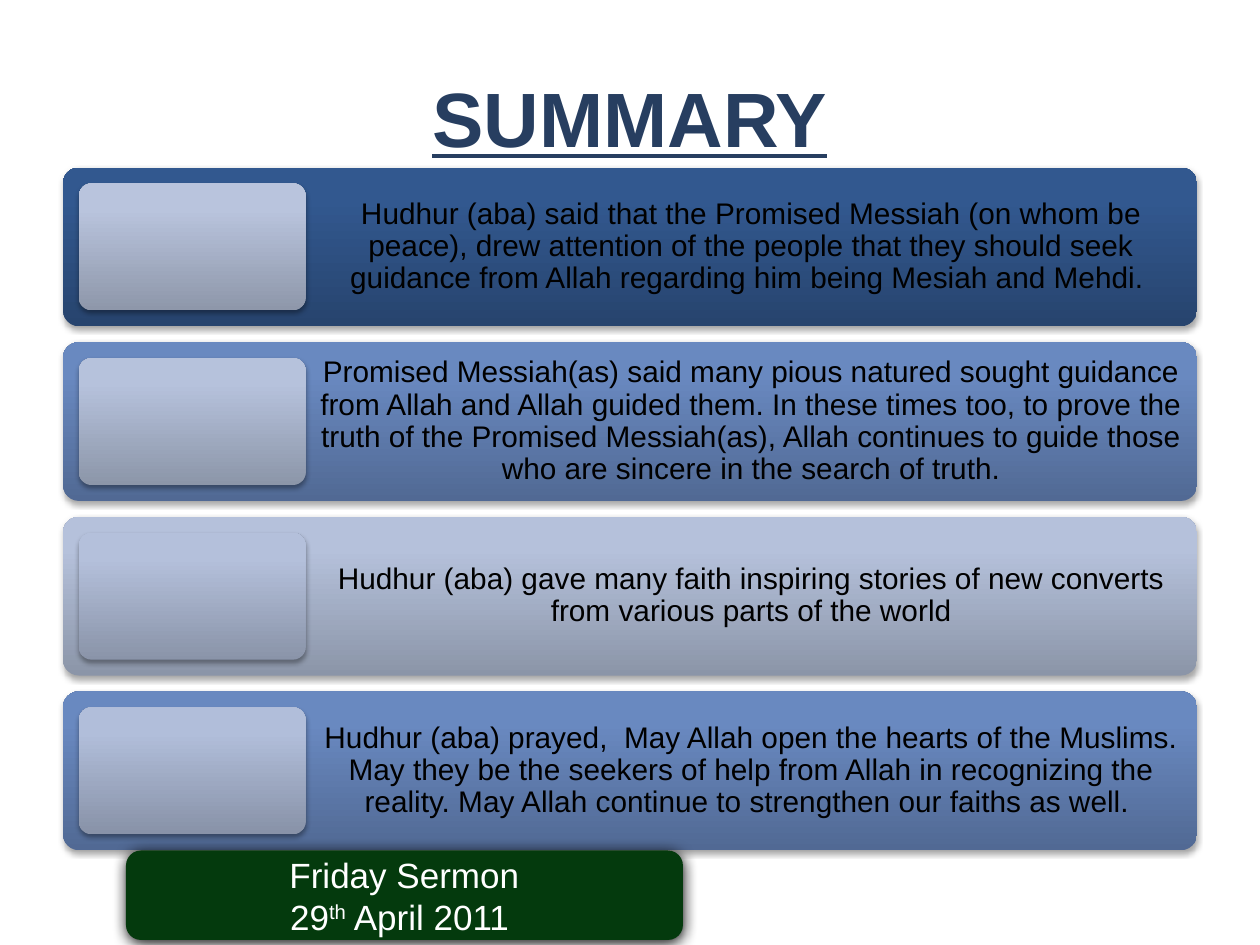
from dataclasses import dataclass

import lxml.etree
import pptx
import pptx.dml.color
import pptx.enum.shapes
import pptx.enum.text
import pptx.oxml.ns
import pptx.util

RGBColor = pptx.dml.color.RGBColor
ROUNDED = pptx.enum.shapes.MSO_SHAPE.ROUNDED_RECTANGLE
ANCHOR = pptx.enum.text.MSO_ANCHOR
CENTER = pptx.enum.text.PP_ALIGN.CENTER
qn = pptx.oxml.ns.qn

BLACK = RGBColor(0x00, 0x00, 0x00)
WHITE = RGBColor(0xFF, 0xFF, 0xFF)
NAVY = RGBColor(0x27, 0x3E, 0x60)
GREEN = RGBColor(0x04, 0x3A, 0x0D)

# Slide and row grid, in inches
SLIDE_WIDTH, SLIDE_HEIGHT = 10, 7.5
MARGIN = 0.05 * SLIDE_WIDTH
ROW_WIDTH = SLIDE_WIDTH - 2 * MARGIN
ROW_TOP, ROW_HEIGHT = 1.33, 1.26
ROW_PITCH = 1.1 * ROW_HEIGHT
PANEL_INSET = 0.1 * ROW_HEIGHT
PANEL_WIDTH = 0.2 * ROW_WIDTH
TEXT_LEFT = MARGIN + PANEL_INSET + PANEL_WIDTH


@dataclass(frozen=True)
class Gradient:
    """Colours from the bottom edge to the top edge."""
    bottom: RGBColor
    middle: RGBColor
    top: RGBColor


@dataclass(frozen=True)
class Shadow:
    opacity: int
    blur: float
    distance: float


@dataclass(frozen=True)
class Box:
    left: float
    top: float
    width: float
    height: float

    def lengths(self) -> list[pptx.util.Length]:
        return [pptx.util.Inches(value)
                for value in (self.left, self.top, self.width, self.height)]


@dataclass(frozen=True)
class SummaryRow:
    text: str
    bar: Gradient
    panel: Gradient


def gradient(bottom: str, middle: str, top: str) -> Gradient:
    return Gradient(*map(RGBColor.from_string, (bottom, middle, top)))


BLUE_BAR = gradient("516994", "6989C0", "6889C2")
SOFT_SHADOW = Shadow(35, 3.1, 1.8)
STRONG_SHADOW = Shadow(100, 8.5, 1)

ROWS = [
    SummaryRow(
        "Hudhur (aba) said that the Promised Messiah (on whom be peace), drew "
        "attention of the people that they should seek guidance from Allah "
        "regarding him being Mesiah and Mehdi. ",
        gradient("27446E", "32588F", "315892"),
        gradient("8E97AA", "B9C4DD", "B9C5DF")),
    SummaryRow(
        "Promised Messiah(as) said many pious natured sought guidance from "
        "Allah and Allah guided them. In these times too, to prove the truth "
        "of the Promised Messiah(as), Allah continues to guide those who are "
        "sincere in the search of truth.",
        BLUE_BAR,
        gradient("8C96A9", "B6C2DC", "B6C3DE")),
    SummaryRow(
        "Hudhur (aba) gave many faith inspiring stories of new converts from "
        "various parts of the world",
        gradient("8B95A8", "B5C1DB", "B5C2DC"),
        gradient("8A94A9", "B4C0DB", "B4C1DD")),
    SummaryRow(
        "Hudhur (aba) prayed,  May Allah open the hearts of the Muslims. May "
        "they be the seekers of help from Allah in recognizing the reality. "
        "May Allah continue to strengthen our faiths as well. ",
        BLUE_BAR,
        gradient("8892A8", "B1BEDA", "B1BFDC")),
]


def add_element(parent, tag: str, **attributes):
    return lxml.etree.SubElement(
        parent, qn(tag), {name: str(value) for name, value in attributes.items()})


def add_shadow(shape, shadow: Shadow) -> None:
    shape.shadow.inherit = False
    effects = shape._element.spPr.find(qn("a:effectLst"))
    outer = add_element(effects, "a:outerShdw",
                        blurRad=pptx.util.Pt(shadow.blur),
                        dist=pptx.util.Pt(shadow.distance),
                        dir=90 * 60000, rotWithShape=0)
    color = add_element(outer, "a:srgbClr", val=BLACK)
    add_element(color, "a:alpha", val=shadow.opacity * 1000)


def fill_gradient(shape, colors: Gradient) -> None:
    shape.fill.gradient()
    fill = shape._element.spPr.find(qn("a:gradFill"))
    for child in list(fill):
        fill.remove(child)
    stops = add_element(fill, "a:gsLst")
    for position, color in ((0, colors.bottom), (80, colors.middle),
                            (100, colors.top)):
        stop = add_element(stops, "a:gs", pos=position * 1000)
        add_element(stop, "a:srgbClr", val=color)
    add_element(fill, "a:lin", ang=270 * 60000, scaled=0)


def add_rounded(shapes, box: Box, shadow: Shadow):
    shape = shapes.add_shape(ROUNDED, *box.lengths())
    shape.line.fill.background()
    add_shadow(shape, shadow)
    return shape


def add_gradient_box(shapes, box: Box, colors: Gradient) -> None:
    shape = add_rounded(shapes, box, SOFT_SHADOW)
    shape.adjustments[0] = 0.1
    fill_gradient(shape, colors)


def format_text(text_frame, size: float, color: RGBColor) -> None:
    text_frame.word_wrap = True
    for paragraph in text_frame.paragraphs:
        paragraph.alignment = CENTER
        for run in paragraph.runs:
            run.font.name = "Arial"
            run.font.size = pptx.util.Pt(size)
            run.font.color.rgb = color


def set_insets(text_frame, inset: float) -> None:
    for side in ("left", "top", "right", "bottom"):
        setattr(text_frame, f"margin_{side}", pptx.util.Inches(inset))


def add_title(slide) -> None:
    box = Box(MARGIN, 0.5, ROW_WIDTH, 1)
    text_frame = slide.shapes.add_textbox(*box.lengths()).text_frame
    text_frame.text = "SUMMARY"
    set_insets(text_frame, 0)
    text_frame.margin_top = pptx.util.Inches(0.06)
    format_text(text_frame, 44, NAVY)
    font = text_frame.paragraphs[0].runs[0].font
    font.bold = font.underline = True


def add_row(shapes, index: int, row: SummaryRow) -> None:
    top = ROW_TOP + index * ROW_PITCH
    add_gradient_box(shapes, Box(MARGIN, top, ROW_WIDTH, ROW_HEIGHT), row.bar)
    text_box = Box(TEXT_LEFT, top, MARGIN + ROW_WIDTH - TEXT_LEFT, ROW_HEIGHT)
    text_frame = shapes.add_textbox(*text_box.lengths()).text_frame
    text_frame.text = row.text
    text_frame.vertical_anchor = ANCHOR.MIDDLE
    set_insets(text_frame, 0.07)
    format_text(text_frame, 17, BLACK)
    text_frame.paragraphs[0].line_spacing = 0.9
    panel_box = Box(MARGIN + PANEL_INSET, top + PANEL_INSET,
                    PANEL_WIDTH, ROW_HEIGHT - 2 * PANEL_INSET)
    add_gradient_box(shapes, panel_box, row.panel)


def add_date_label(slide) -> None:
    shape = add_rounded(slide.shapes, Box(1, 6.75, 4.42, 0.71), STRONG_SHADOW)
    shape.fill.solid()
    shape.fill.fore_color.rgb = GREEN
    text_frame = shape.text_frame
    text_frame.text = "Friday Sermon"
    text_frame.vertical_anchor = ANCHOR.MIDDLE
    date = text_frame.add_paragraph()
    for text in ("29", "th", " April 2011 "):
        date.add_run().text = text
    format_text(text_frame, 20, WHITE)
    date.runs[1].font._element.set("baseline", "30000")


def main() -> None:
    presentation = pptx.Presentation()
    presentation.slide_width = pptx.util.Inches(SLIDE_WIDTH)
    presentation.slide_height = pptx.util.Inches(SLIDE_HEIGHT)
    slide = presentation.slides.add_slide(presentation.slide_layouts[6])
    add_title(slide)
    summary = slide.shapes.add_group_shape()
    for index, row in enumerate(ROWS):
        add_row(summary.shapes, index, row)
    add_date_label(slide)
    presentation.save("out.pptx")


if __name__ == "__main__":
    main()
